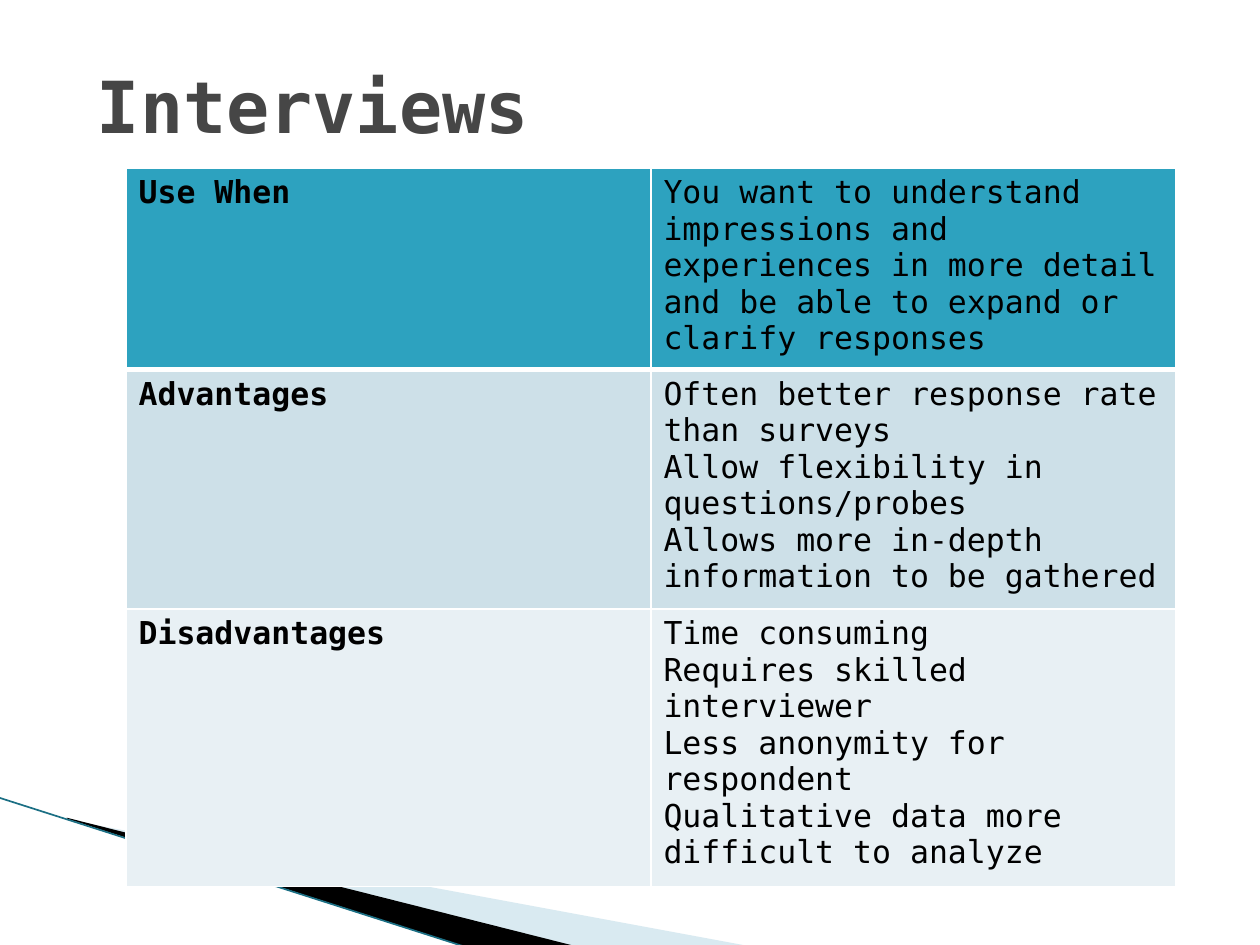
from dataclasses import dataclass

from lxml import etree
from pptx import Presentation
from pptx.dml.color import RGBColor as Rgb
from pptx.enum.shapes import MSO_CONNECTOR as Connector
from pptx.enum.text import MSO_ANCHOR as Anchor
from pptx.oxml.ns import qn
from pptx.util import Inches, Pt


@dataclass(frozen=True)
class Theme:
    font: str = "DejaVu Sans Mono"
    title_size: float = 41
    body_size: float = 18
    title: str = "464646"
    ink: str = "000000"
    border: str = "FFFFFF"
    sweep: str = "A0CBDC"
    edge: str = "1B6F84"
    rows: tuple = ("2DA2BF", "CDE0E8", "E8F0F4")


class SlideBuilder:
    """Draws on one slide; lengths are percentages of its width and height."""

    def __init__(self, deck, theme):
        self.deck, self.theme = deck, theme
        self.slide = deck.slides.add_slide(deck.slide_layouts[6])

    def x(self, share):
        return round(self.deck.slide_width * share / 100)

    def y(self, share):
        return round(self.deck.slide_height * share / 100)

    def area(self, left, top, width, height):
        return self.x(left), self.y(top), self.x(width), self.y(height)

    def fill_text(self, frame, lines, size, color, bold):
        style = {"name": self.theme.font, "size": Pt(size), "bold": bold}
        frame.word_wrap = True
        for index, line in enumerate(lines):
            para = frame.paragraphs[0] if index == 0 else frame.add_paragraph()
            span = para.add_run()
            span.text = line
            for key, value in style.items():
                setattr(span.font, key, value)
            span.font.color.rgb = Rgb.from_string(color)

    def title(self, text, *area):
        box = self.slide.shapes.add_textbox(*self.area(*area))
        box.text_frame.vertical_anchor = Anchor.MIDDLE
        self.fill_text(box.text_frame, [text], self.theme.title_size,
                       self.theme.title, True)

    def wedge(self, points, color, opacity=100):
        start, *rest = [(self.x(x), self.y(y)) for x, y in points]
        builder = self.slide.shapes.build_freeform(*start)
        builder.add_line_segments(rest, close=True)
        shape = builder.convert_to_shape()
        shape.shadow.inherit = False
        shape.line.fill.background()
        shape.fill.solid()
        shape.fill.fore_color.rgb = Rgb.from_string(color)
        if opacity < 100:
            tint = shape._element.spPr.find(".//" + qn("a:srgbClr"))
            etree.SubElement(tint, qn("a:alpha"), val=str(opacity * 1000))

    def line(self, start, end, color, width):
        (x1, y1), (x2, y2) = start, end
        rule = self.slide.shapes.add_connector(
            Connector.STRAIGHT, self.x(x1), self.y(y1), self.x(x2), self.y(y2))
        rule.line.color.rgb = Rgb.from_string(color)
        rule.line.width = Pt(width)
        etree.SubElement(rule._element.spPr, qn("a:effectLst"))

    def cell_borders(self, cell, widths):
        properties = cell._tc.get_or_add_tcPr()
        for index, (side, width) in enumerate(widths.items()):
            border = etree.Element(qn("a:" + side), w=str(int(Pt(width))))
            fill = etree.SubElement(border, qn("a:solidFill"))
            etree.SubElement(fill, qn("a:srgbClr"), val=self.theme.border)
            properties.insert(index, border)

    def table(self, rows, heights, *area):
        table = self.slide.shapes.add_table(len(rows), 2, *self.area(*area)).table
        for row, height in zip(table.rows, heights):
            row.height = self.y(height)
        for r, (label, points) in enumerate(rows):
            top, bottom = (3 if r == 1 else 1), (3 if r == 0 else 1)
            for c, lines in enumerate(([label], points)):
                cell = table.cell(r, c)
                cell.fill.solid()
                cell.fill.fore_color.rgb = Rgb.from_string(self.theme.rows[r])
                self.cell_borders(cell, {"lnL": 1, "lnR": 1, "lnT": top, "lnB": bottom})
                self.fill_text(cell.text_frame, lines, self.theme.body_size,
                               self.theme.ink, c == 0)


INTERVIEW_ROWS = [
    ("Use When", [
        "You want to understand impressions and experiences in more detail "
        "and be able to expand or clarify responses"]),
    ("Advantages", [
        "Often better response rate than surveys",
        "Allow flexibility in questions/probes",
        "Allows more in-depth information to be gathered"]),
    ("Disadvantages", [
        "Time consuming",
        "Requires skilled interviewer",
        "Less anonymity for respondent",
        "Qualitative data more difficult to analyze"]),
]


def main():
    deck = Presentation()
    deck.slide_width, deck.slide_height = Inches(10), Inches(7.5)
    theme = Theme()
    page = SlideBuilder(deck, theme)

    # Sweeping wedges in the bottom corner
    page.wedge([(5.5, 86.8), (59.5, 100.13), (45.6, 100.13), (5.5, 86.67)], theme.sweep, 40)
    page.wedge([(5.3, 86.53), (45.7, 100.13), (37.2, 100.27), (5.4, 86.67)], theme.ink)
    page.line((-0.1, 84.4), (37.1, 100.27), theme.edge, 0.95)

    # Title and comparison table
    page.title("Interviews", 6.7, 2.27, 76.2, 17.6)
    page.table(INTERVIEW_ROWS, (19.2, 23.73, 23.73), 10, 17.78, 83.33, 66.66)

    deck.save("out.pptx")


if __name__ == "__main__":
    main()
